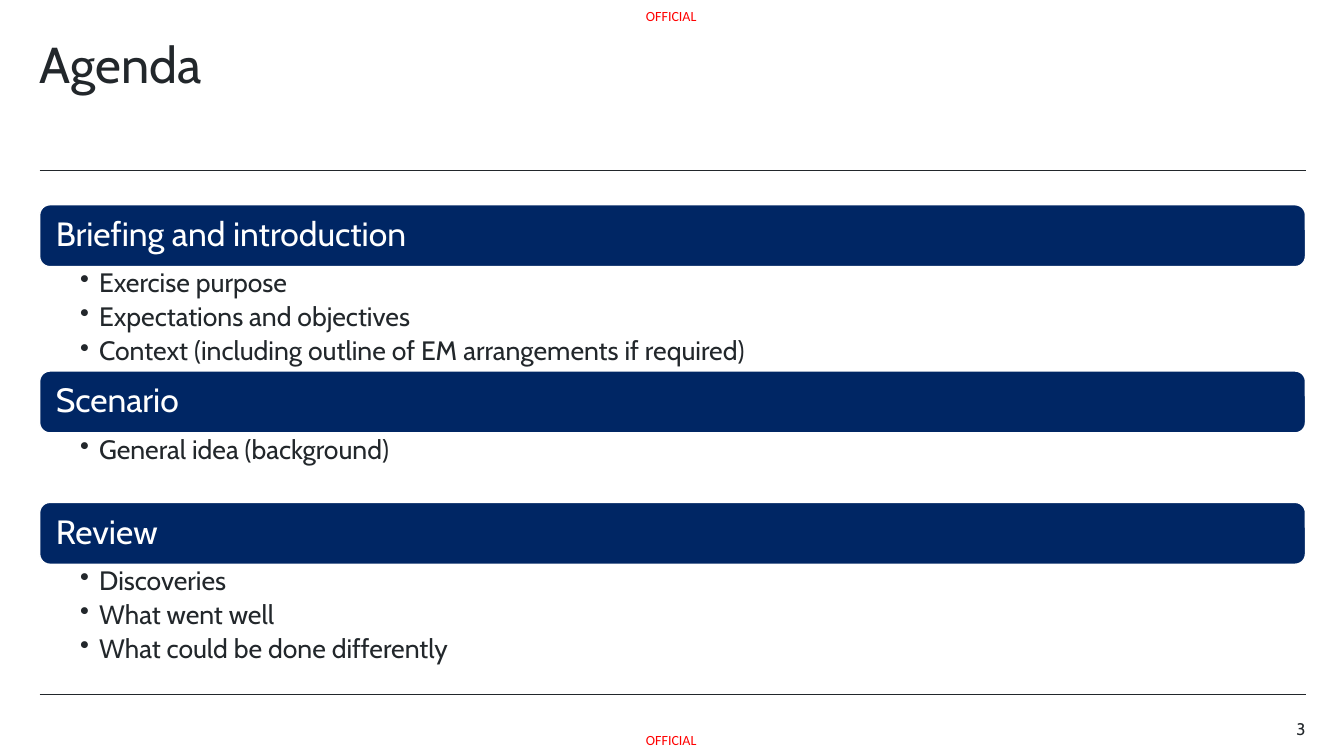
import pptx
import pptx.dml.color
import pptx.enum.shapes
import pptx.enum.text
import pptx.oxml.ns
import pptx.util
from lxml import etree

Cm = pptx.util.Cm
Pt = pptx.util.Pt
ALIGN = pptx.enum.text.PP_ALIGN
ANCHOR = pptx.enum.text.MSO_ANCHOR
INK, NAVY, WHITE, RED = "22272B", "002664", "FFFFFF", "FF0000"
SLIDE_WIDTH, SLIDE_HEIGHT = 33.87, 19.05
LEFT, WIDTH = 1, 31.9
BAR_HEIGHT = 1.56
BULLET_INDENT = 0.48

AGENDA = [
    ("Briefing and introduction", 2.63,
     ["Exercise purpose", "Expectations and objectives",
      "Context (including outline of EM arrangements if required)"]),
    ("Scenario", 1.75, ["General idea (background)"]),
    ("Review", 2.63,
     ["Discoveries", "What went well", "What could be done differently"]),
]


def colour(value):
    return pptx.dml.color.RGBColor.from_string(value)


def add_child(parent, tag, **attributes):
    return etree.SubElement(parent, pptx.oxml.ns.qn(tag), attributes)


def set_frame(shape, insets=(0, 0, 0, 0), anchor=ANCHOR.TOP, wrap=True):
    frame = shape.text_frame
    frame.word_wrap = wrap
    frame.vertical_anchor = anchor
    frame.margin_left, frame.margin_top, frame.margin_right, frame.margin_bottom = map(Cm, insets)
    return frame


def write(para, text, size, ink=INK, font="Cabin", align=ALIGN.LEFT, spacing=None):
    para.add_run().text = text
    para.alignment = align
    para.line_spacing = spacing
    para.font.size = Pt(size)
    para.font.name = font
    para.font.color.rgb = colour(ink)


def add_bullet(para):
    properties = para._p.get_or_add_pPr()
    properties.set("marL", str(Cm(BULLET_INDENT)))
    properties.set("indent", str(-Cm(BULLET_INDENT)))
    add_child(add_child(properties, "a:buClr"), "a:srgbClr", val=INK)
    add_child(properties, "a:buChar", char="•")


def add_label(page, box, text, size, wrap=True, **style):
    label = page.shapes.add_textbox(*map(Cm, box))
    write(set_frame(label, wrap=wrap).paragraphs[0], text, size, **style)


def add_rule(page, left, top, width):
    rule = page.shapes.add_connector(
        pptx.enum.shapes.MSO_CONNECTOR.STRAIGHT, Cm(left), Cm(top), Cm(left + width), Cm(top))
    rule.line.color.rgb = colour(INK)
    rule.line.width = Pt(0.75)
    add_child(rule._element.spPr, "a:effectLst")


def add_bar(page, left, top, width, heading):
    bar = page.shapes.add_shape(
        pptx.enum.shapes.MSO_SHAPE.ROUNDED_RECTANGLE,
        Cm(left), Cm(top), Cm(width), Cm(BAR_HEIGHT))
    bar.shadow.inherit = False
    bar.fill.solid()
    bar.fill.fore_color.rgb = colour(NAVY)
    bar.line.color.rgb = colour(WHITE)
    bar.line.width = Pt(1)
    frame = set_frame(bar, (0.33, 0.25, 0.33, 0.25), ANCHOR.MIDDLE)
    write(frame.paragraphs[0], heading, 24, WHITE, spacing=0.9)


def add_points(page, box, points):
    body = page.shapes.add_textbox(*map(Cm, box))
    frame = set_frame(body, (1.02, 0.08, 0.48, 0.08))
    for index, point in enumerate(points):
        para = frame.add_paragraph() if index else frame.paragraphs[0]
        add_bullet(para)
        write(para, point, 19, spacing=0.9)
        if index:
            para.space_before = Pt(3.8)


def add_agenda(page, left, top, width):
    for heading, height, points in AGENDA:
        add_bar(page, left, top, width, heading)
        add_points(page, (left, top + BAR_HEIGHT, width, height), points)
        top += BAR_HEIGHT + height


def add_page_furniture(page):
    for top in (0.18, 18.44):
        add_label(page, (16.28, top, 1.35, 0.43), "OFFICIAL", 10,
                  wrap=False, ink=RED, font="Calibri")
    for top in (4.29, 17.5):
        add_rule(page, LEFT, top, WIDTH)
    add_label(page, (LEFT + WIDTH - 2, 18.11, 2, 0.51), "3", 12, align=ALIGN.RIGHT)


def main():
    deck = pptx.Presentation()
    deck.slide_width, deck.slide_height = Cm(SLIDE_WIDTH), Cm(SLIDE_HEIGHT)
    page = deck.slides.add_slide(deck.slide_layouts[6])
    add_page_furniture(page)
    add_label(page, (LEFT, 1, 28, 2.8), "Agenda", 36, spacing=0.9)
    add_agenda(page, LEFT, 5.16, WIDTH)
    deck.save("out.pptx")


if __name__ == "__main__":
    main()
